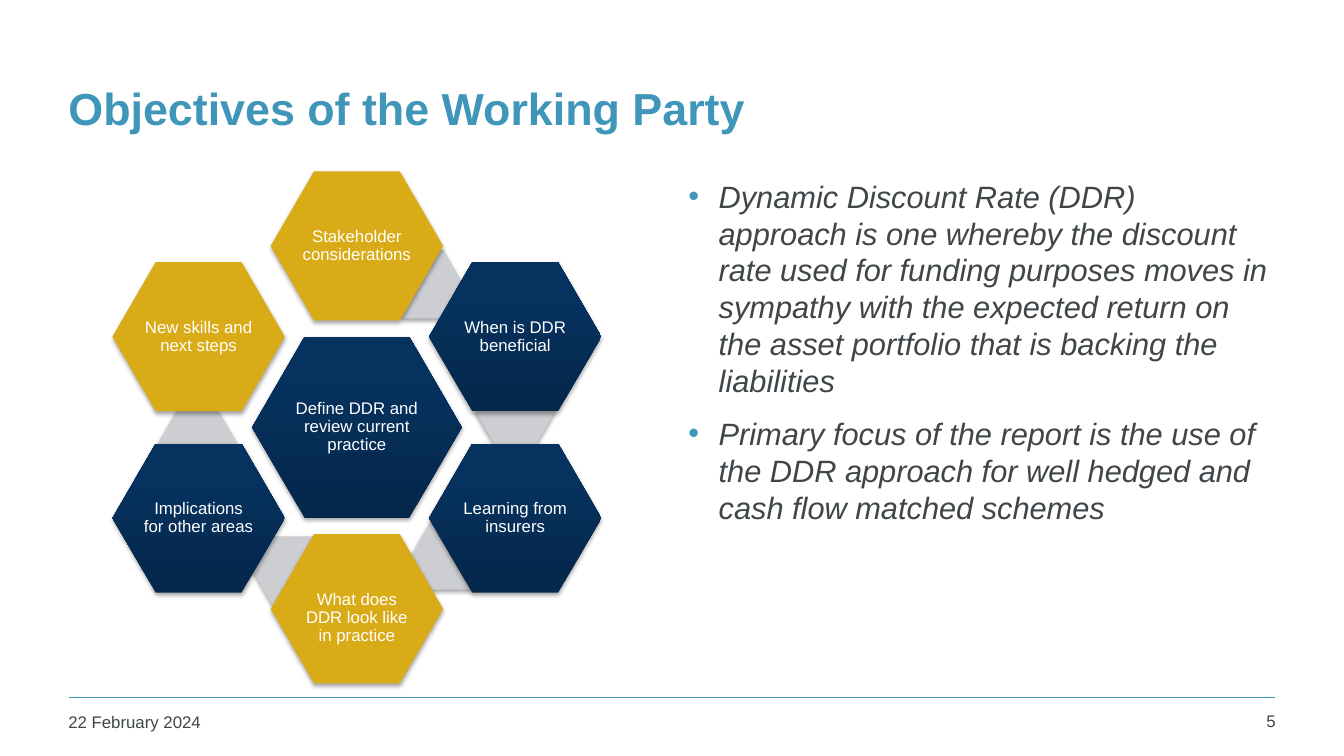
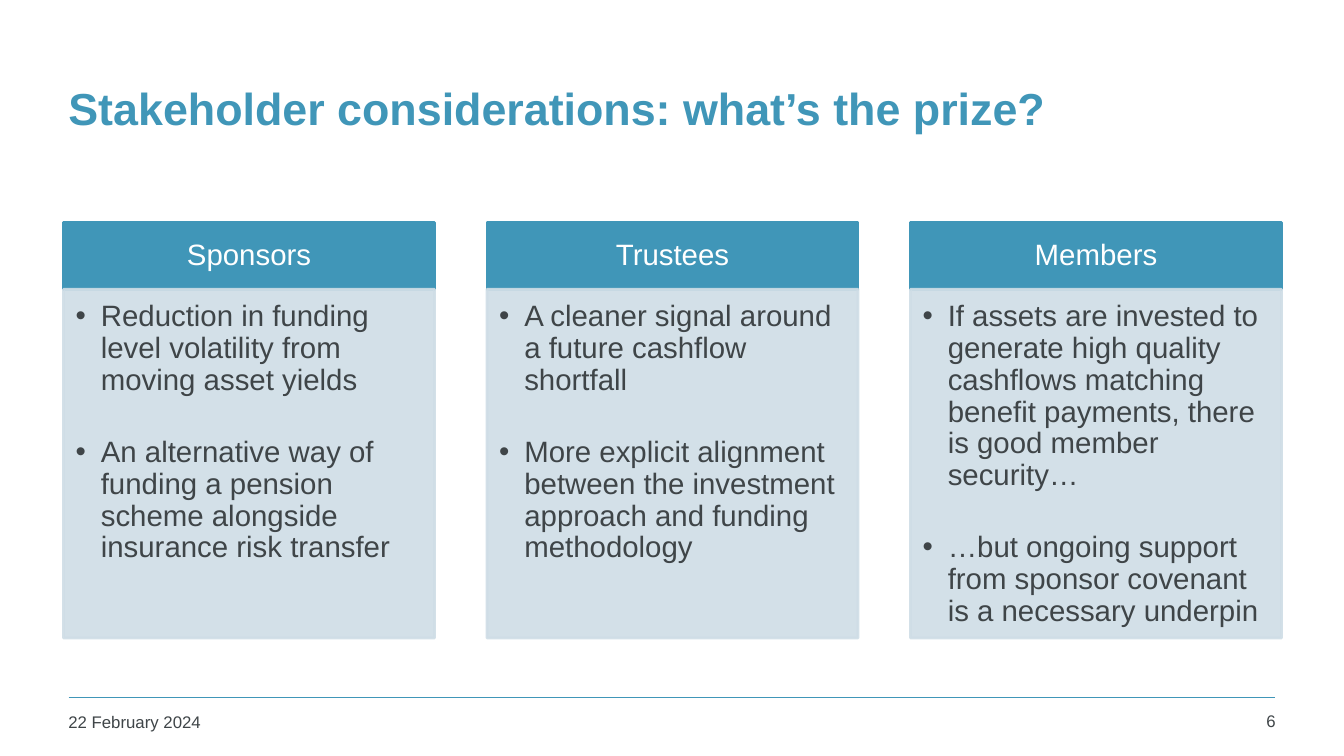
from dataclasses import dataclass

from lxml import etree
from pptx import Presentation
from pptx import util as u
from pptx.dml.color import RGBColor
from pptx.enum import shapes, text
from pptx.oxml import ns

PX = 9144
SHAPE = shapes.MSO_SHAPE
ALIGN = text.PP_ALIGN
ANCHOR = text.MSO_ANCHOR


@dataclass(frozen=True)
class Theme:
    """Colours, font and type sizes shared by all slides."""
    font: str = "Arial"
    teal: str = "4096B8"
    ink: str = "3F4548"
    white: str = "FFFFFF"
    gold: str = "D9AB16"
    grey: str = "CCCED1"
    pale: str = "CFDDE6"
    navy: tuple = ("05274A", "063260")
    title_size: int = 32
    body_size: int = 22
    card_size: int = 21
    small_size: int = 12


def px(n):
    """Turn px into EMU."""
    return u.Emu(round(n * PX))


def rgb(code):
    """Turn a hex code into a colour."""
    return RGBColor.from_string(code)


def assign(obj, values):
    """Set each attribute named in a dict."""
    for name, value in values.items():
        setattr(obj, name, value)


def child(parent, tag, **attrs):
    """Append a DrawingML element."""
    el = etree.SubElement(parent, ns.qn(tag))
    for name, value in attrs.items():
        el.set(name, str(value))
    return el


class Deck:
    """Holds the style and the current slide."""

    def __init__(self, theme, width, height):
        """Start an empty presentation."""
        self.t = theme
        self.prs = Presentation()
        assign(self.prs, {"slide_width": px(width), "slide_height": px(height)})
        self.s = None

    def slide(self, title, number):
        """Add a slide with its title, rule and footer."""
        t = self.t
        self.s = self.prs.slides.add_slide(self.prs.slide_layouts[6])
        self.rule(68, 692, 1265)
        self.textbox((58, 44, 1209, 125), [title], t.title_size, t.teal,
                     bold=True, anchor=ANCHOR.MIDDLE)
        self.textbox((58, 701, 294, 36), ["22 February 2024"], t.small_size, t.ink)
        self.textbox((1181, 700, 94, 37), [str(number)], t.small_size, t.ink,
                     align=ALIGN.RIGHT)

    def rule(self, x1, y, x2):
        """Draw a thin horizontal line."""
        c = self.s.shapes.add_connector(
            shapes.MSO_CONNECTOR.STRAIGHT, px(x1), px(y), px(x2), px(y))
        c.line.color.rgb = rgb(self.t.teal)
        c.line.width = u.Pt(1)
        child(c._element.spPr, "a:effectLst")

    def fill_text(self, sp, paras, size, color, bold=False, italic=False,
                  align=ALIGN.LEFT, anchor=ANCHOR.TOP, insets=(10, 5, 10, 5),
                  spacing=1.0, gap=0, indent=0, bullet=None):
        """Fill a shape with formatted paragraphs."""
        tf = sp.text_frame
        sides = ("margin_left", "margin_top", "margin_right", "margin_bottom")
        assign(tf, {"word_wrap": True, "vertical_anchor": anchor,
                    **dict(zip(sides, map(px, insets)))})
        for i, words in enumerate(paras):
            p = tf.add_paragraph() if i else tf.paragraphs[0]
            assign(p, {"alignment": align, "line_spacing": spacing,
                       "space_before": u.Pt(gap if i else 0)})
            r = p.add_run()
            r.text = words
            assign(r.font, {"name": self.t.font, "size": u.Pt(size),
                            "bold": bold, "italic": italic})
            r.font.color.rgb = rgb(color)
            if indent:
                self.bullet(p, indent, bullet or color)

    def bullet(self, p, indent, color):
        """Give a paragraph a hanging bullet."""
        pPr = p._p.get_or_add_pPr()
        pPr.set("marL", str(px(indent)))
        pPr.set("indent", str(-px(indent)))
        child(child(pPr, "a:buClr"), "a:srgbClr", val=color)
        child(pPr, "a:buFont", typeface=self.t.font)
        child(pPr, "a:buChar", char="•")

    def textbox(self, box, paras, size, color, **fmt):
        """Add a wrapping text box."""
        sp = self.s.shapes.add_textbox(*map(px, box))
        self.fill_text(sp, paras, size, color, **fmt)

    def shape(self, kind, box):
        """Add a preset shape without the default shadow."""
        sp = self.s.shapes.add_shape(kind, *map(px, box))
        sp.shadow.inherit = False
        return sp

    def hexagon(self, cx, cy, w, h, fill, label=None):
        """Add a shadowed hexagon around a centre point."""
        sp = self.shape(SHAPE.HEXAGON, (cx - w / 2, cy - h / 2, w, h))
        sp.adjustments[0] = 0.29
        sp.line.fill.background()
        if isinstance(fill, tuple):
            sp.fill.gradient()
            sp.fill.gradient_angle = 90
            for stop, color, at in zip(sp.fill.gradient_stops, fill, (0, 0.8)):
                stop.color.rgb = rgb(color)
                stop.position = at
        else:
            sp.fill.solid()
            sp.fill.fore_color.rgb = rgb(fill)
        shadow = child(sp._element.spPr.find(ns.qn("a:effectLst")), "a:outerShdw",
                       blurRad=40000, dist=23000, dir=5400000, rotWithShape=0)
        child(child(shadow, "a:srgbClr", val="000000"), "a:alpha", val=35000)
        if label:
            top = 20 if label.startswith("What") else 2
            self.fill_text(sp, [label], self.t.small_size, self.t.white,
                           align=ALIGN.CENTER, anchor=ANCHOR.MIDDLE,
                           insets=(2, top, 2, 2), spacing=0.9)

    def panel(self, box, color, paras, ink, opacity=100, **fmt):
        """Add a filled rectangle with text."""
        sp = self.shape(SHAPE.RECTANGLE, box)
        sp.fill.solid()
        sp.fill.fore_color.rgb = rgb(color)
        sp.line.color.rgb = rgb(color)
        sp.line.width = u.Pt(2)
        if opacity < 100:
            for el in list(sp._element.spPr.iter(ns.qn("a:srgbClr"))):
                child(el, "a:alpha", val=opacity * 1000)
        self.fill_text(sp, paras, self.t.card_size, ink, spacing=0.9, **fmt)

    def card(self, x, heading, points):
        """Add a heading panel above a bulleted panel."""
        t = self.t
        self.panel((x, 221, 368, 66), t.teal, [heading], t.white,
                   align=ALIGN.CENTER, anchor=ANCHOR.MIDDLE, insets=(16, 9, 16, 9))
        self.panel((x, 287, 368, 346), t.pale, points, t.ink, opacity=90,
                   insets=(12, 12, 16, 18), gap=29, indent=25)


def objectives(deck):
    """Build the hexagon ring and the definition."""
    t = deck.t
    deck.slide("Objectives of the Working Party", 5)
    deck.textbox((673, 171, 594, 507), [
        "Dynamic Discount Rate (DDR) approach is one whereby the discount rate used "
        "for funding purposes moves in sympathy with the expected return on the asset "
        "portfolio that is backing the liabilities",
        "Primary focus of the report is the use of the DDR approach for well hedged "
        "and cash flow matched schemes",
    ], t.body_size, t.ink, italic=True, gap=11, indent=30, bullet=t.teal)
    cx, cy, dx, dy = 354, 424, 157, 90
    ring = [
        (0, -2, t.gold, "Stakeholder considerations", (66, -142)),
        (1, -1, t.navy, "When is DDR beneficial", (157, -16)),
        (1, 1, t.navy, "Learning from insurers", (93, 127)),
        (0, 2, t.gold, "What does DDR look like in practice", (-64, 142)),
        (-1, 1, t.navy, "Implications for other areas", (-158, 16)),
        (-1, -1, t.gold, "New skills and next steps", None),
    ]
    deck.hexagon(cx, cy, 208, 180, t.navy, "Define DDR and review current practice")
    for col, row, fill, label, link in ring:
        if link:
            deck.hexagon(cx + link[0], cy + link[1], 79, 68, t.grey)
        deck.hexagon(cx + col * dx, cy + row * dy, 171, 148, fill, label)


def prize(deck):
    """Build one card for each stakeholder."""
    deck.slide("Stakeholder considerations: what’s the prize?", 6)
    cards = {
        "Sponsors": [
            "Reduction in funding level volatility from moving asset yields",
            "An alternative way of funding a pension scheme alongside insurance "
            "risk transfer"],
        "Trustees": [
            "A cleaner signal around a future cashflow shortfall",
            "More explicit alignment between the investment approach and funding "
            "methodology"],
        "Members": [
            "If assets are invested to generate high quality cashflows matching "
            "benefit payments, there is good member security…",
            "…but ongoing support from sponsor covenant is a necessary underpin"],
    }
    for i, (heading, points) in enumerate(cards.items()):
        deck.card(63 + 420 * i, heading, points)


def main():
    """Build and save the deck."""
    deck = Deck(Theme(), 1333, 750)
    objectives(deck)
    prize(deck)
    deck.prs.save("out.pptx")


if __name__ == "__main__":
    main()
